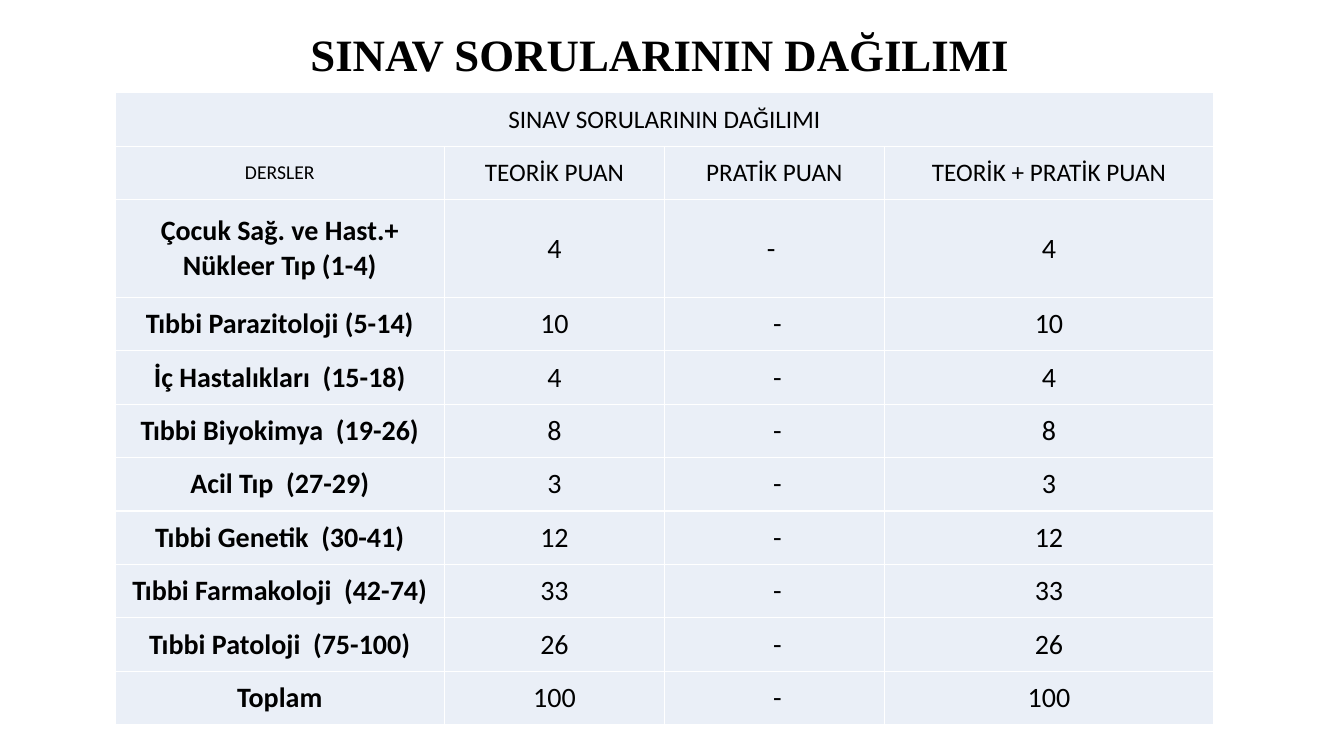
from dataclasses import dataclass

from pptx import Presentation
from pptx.dml.color import RGBColor
from pptx.enum.text import MSO_ANCHOR, PP_ALIGN
from pptx.util import Inches, Pt

BLACK, PALE_BLUE = "000000", "EAEFF7"
COLUMN_WIDTHS = [3.27, 2.18, 2.18, 3.27]
ROW_HEIGHT, TALL_ROW_HEIGHT = 0.53, 0.97
MARGINS = ("margin_left", "margin_top", "margin_right", "margin_bottom")


@dataclass
class Lesson:
    name: str
    points: int
    practical: str = " -"
    height: float = ROW_HEIGHT


LESSONS = [
    Lesson("Çocuk Sağ. ve Hast.+ Nükleer Tıp (1-4)", 4, "- ", TALL_ROW_HEIGHT),
    Lesson("Tıbbi Parazitoloji (5-14)", 10),
    Lesson("İç Hastalıkları  (15-18)", 4),
    Lesson("Tıbbi Biyokimya  (19-26)", 8),
    Lesson("Acil Tıp  (27-29)", 3),
    Lesson("Tıbbi Genetik  (30-41)", 12),
    Lesson("Tıbbi Farmakoloji  (42-74)", 33),
    Lesson("Tıbbi Patoloji  (75-100)", 26),
    Lesson("Toplam", 100),
]
HEADINGS = ["DERSLER", "TEORİK PUAN", "PRATİK PUAN", "TEORİK + PRATİK PUAN"]


def rgb(color: str) -> RGBColor:
    return RGBColor.from_string(color)


def write(tf, text: str, size: float, bold: bool = False, name: str = "Calibri") -> None:
    p = tf.paragraphs[0]
    p.alignment = PP_ALIGN.CENTER
    r = p.add_run()
    r.text = text
    for key, value in {"size": Pt(size), "bold": bold, "name": name}.items():
        setattr(r.font, key, value)
    r.font.color.rgb = rgb(BLACK)


def fill_cell(cell, text: str, size: float, bold: bool = False) -> None:
    cell.fill.solid()
    cell.fill.fore_color.rgb = rgb(PALE_BLUE)
    cell.vertical_anchor = MSO_ANCHOR.MIDDLE
    for margin in MARGINS:
        setattr(cell, margin, 0)
    write(cell.text_frame, text, size, bold)


def add_title(s) -> None:
    sp = s.shapes.add_textbox(Inches(0.85), Inches(0.22), Inches(11.5), Inches(0.7))
    tf = sp.text_frame
    tf.word_wrap = True
    tf.vertical_anchor = MSO_ANCHOR.MIDDLE
    write(tf, "SINAV SORULARININ DAĞILIMI ", 32, True, "Times New Roman")
    tf.paragraphs[0].line_spacing = 0.9


def add_points_table(s) -> None:
    heights = [ROW_HEIGHT] * 2 + [lesson.height for lesson in LESSONS]
    table = s.shapes.add_table(
        len(heights), len(COLUMN_WIDTHS), Inches(1.14), Inches(0.92),
        Inches(sum(COLUMN_WIDTHS)), Inches(sum(heights))).table
    table.first_row = table.horz_banding = False
    for column, width in zip(table.columns, COLUMN_WIDTHS):
        column.width = Inches(width)
    for row, height in zip(table.rows, heights):
        row.height = Inches(height)

    # Merged heading and column headings
    table.cell(0, 0).merge(table.cell(0, len(COLUMN_WIDTHS) - 1))
    fill_cell(table.cell(0, 0), "SINAV SORULARININ DAĞILIMI", 18)
    for col, heading in enumerate(HEADINGS):
        fill_cell(table.cell(1, col), heading, 18 if col else 14)

    # One row per lesson
    for row, lesson in enumerate(LESSONS, start=2):
        points = str(lesson.points)
        for col, text in enumerate([lesson.name, points, lesson.practical, points]):
            fill_cell(table.cell(row, col), text, 20, bold=col == 0)


def main() -> None:
    prs = Presentation()
    prs.slide_width, prs.slide_height = Inches(13.33), Inches(7.5)
    s = prs.slides.add_slide(prs.slide_layouts[6])
    add_title(s)
    add_points_table(s)
    prs.save("out.pptx")


if __name__ == "__main__":
    main()
